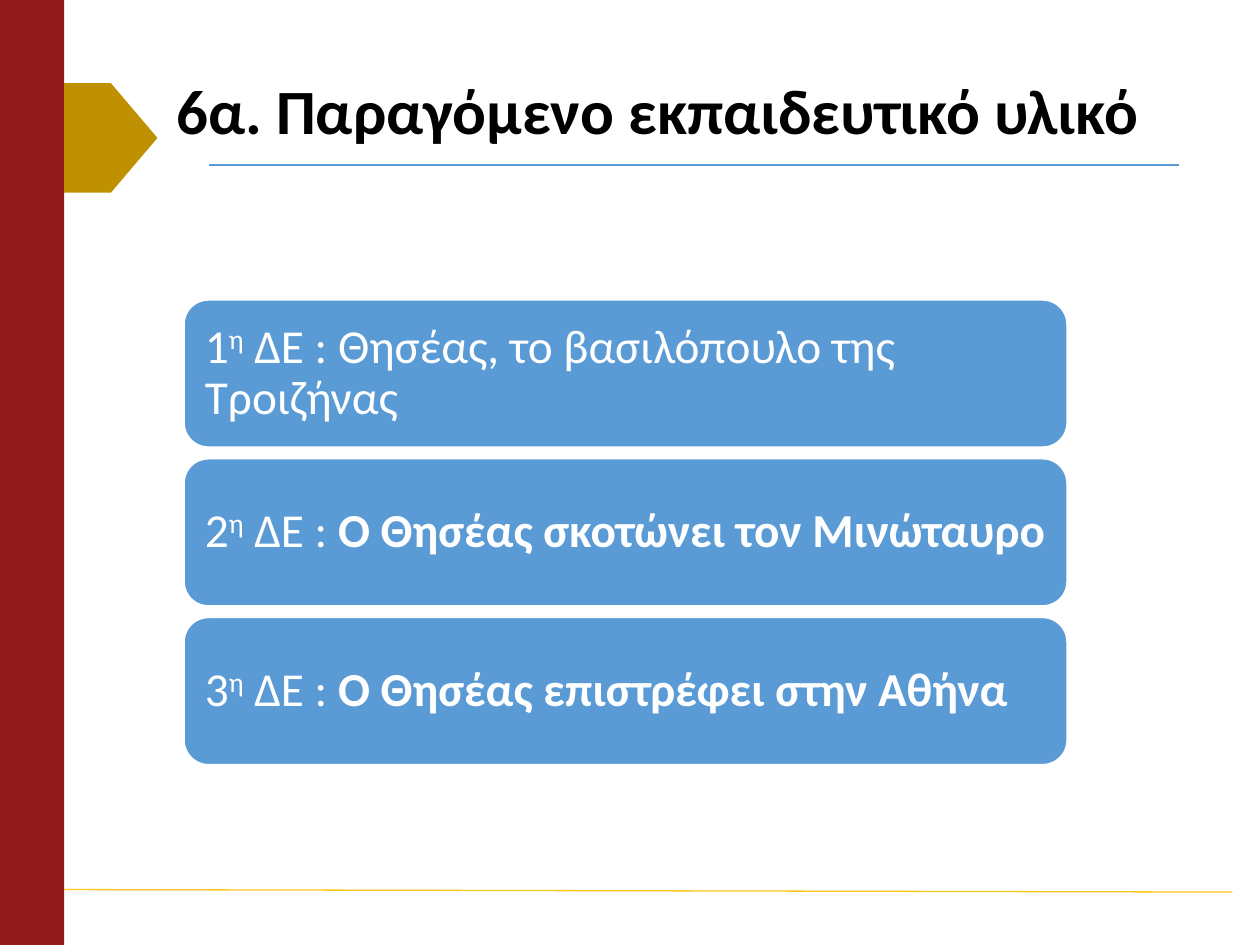
from lxml.etree import SubElement
from pptx import Presentation
from pptx.dml.color import RGBColor
from pptx.enum.shapes import MSO_CONNECTOR, MSO_SHAPE
from pptx.enum.text import MSO_ANCHOR, PP_ALIGN
from pptx.oxml.ns import qn
from pptx.util import Inches, Pt

RED = RGBColor(0x93, 0x1B, 0x1B)
GOLD = RGBColor(0xBF, 0x90, 0x00)
YELLOW = RGBColor(0xFF, 0xC6, 0x1A)
BLUE = RGBColor(0x5B, 0x9B, 0xD5)
WHITE = RGBColor(0xFF, 0xFF, 0xFF)
BLACK = RGBColor(0x00, 0x00, 0x00)


def add_block(kind, left, top, width, height, color):
    shape = slide.shapes.add_shape(
        kind, Inches(left), Inches(top), Inches(width), Inches(height))
    shape.shadow.inherit = False
    shape.fill.solid()
    shape.fill.fore_color.rgb = color
    shape.line.fill.background()
    return shape


def add_run(paragraph, text, size, color, bold=False):
    run = paragraph.add_run()
    run.text = text
    formats = {"name": "Calibri", "size": Pt(size), "bold": bold}
    for name, value in formats.items():
        setattr(run.font, name, value)
    run.font.color.rgb = color
    return run


presentation = Presentation()
presentation.slide_width = Inches(10)
presentation.slide_height = Inches(7.5)
slide = presentation.slides.add_slide(presentation.slide_layouts[6])

add_block(MSO_SHAPE.RECTANGLE, 0, 0, 0.51, 7.5, RED)
add_block(MSO_SHAPE.PENTAGON, 0.51, 0.66, 0.74, 0.87, GOLD)

rules = [
    (1.66, 1.31, 9.36, 1.31, BLUE),
    (0.51, 7.06, 9.78, 7.08, YELLOW),
]
for *ends, color in rules:
    rule = slide.shapes.add_connector(
        MSO_CONNECTOR.STRAIGHT, *[Inches(end) for end in ends])
    rule.line.color.rgb = color
    rule.line.width = Pt(0.75)
    SubElement(rule.element.spPr, qn("a:effectLst"))

title = slide.shapes.add_textbox(
    Inches(1.3), Inches(0.63), Inches(8.58), Inches(0.55))
title_format = {"word_wrap": True, "vertical_anchor": MSO_ANCHOR.MIDDLE,
                "margin_top": 0, "margin_bottom": 0}
for name, value in title_format.items():
    setattr(title.text_frame, name, value)
paragraph = title.text_frame.paragraphs[0]
paragraph.line_spacing = 0.9
add_run(paragraph, "6α. Παραγόμενο εκπαιδευτικό υλικό", 36, BLACK, True)

units = [
    ("Θησέας, το βασιλόπουλο της Τροιζήνας", False),
    ("Ο Θησέας σκοτώνει τον Μινώταυρο", True),
    ("Ο Θησέας επιστρέφει στην Αθήνα", True),
]
unit_format = {"word_wrap": True, "vertical_anchor": MSO_ANCHOR.MIDDLE,
               "margin_left": Inches(0.11), "margin_right": Inches(0.05)}
for index, (topic, bold) in enumerate(units):
    unit = add_block(MSO_SHAPE.ROUNDED_RECTANGLE,
                     1.46, 2.38 + 1.26 * index, 7.01, 1.17, BLUE)
    unit.line.color.rgb = WHITE
    unit.line.width = Pt(1)
    for name, value in unit_format.items():
        setattr(unit.text_frame, name, value)
    paragraph = unit.text_frame.paragraphs[0]
    paragraph.alignment = PP_ALIGN.LEFT
    paragraph.line_spacing = 0.9
    add_run(paragraph, str(index + 1), 27, WHITE)
    ordinal = add_run(paragraph, "η", 27, WHITE)
    ordinal.font._element.set("baseline", "30000")
    add_run(paragraph, " ΔΕ : ", 27, WHITE)
    add_run(paragraph, topic, 27, WHITE, bold)

presentation.save("out.pptx")
